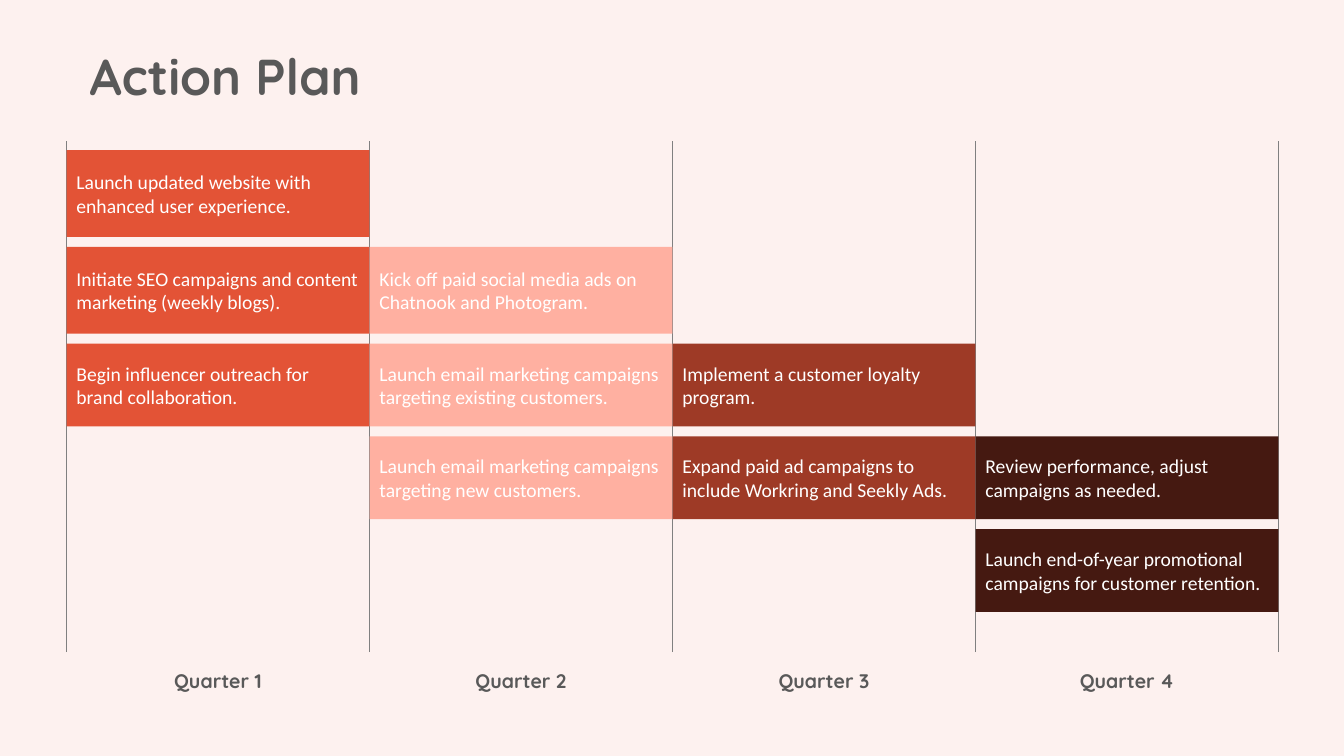
from dataclasses import dataclass
from itertools import accumulate

from lxml import etree
from pptx import Presentation
from pptx.dml.color import RGBColor
from pptx.enum.shapes import MSO_CONNECTOR, MSO_SHAPE
from pptx.enum.text import MSO_ANCHOR, PP_ALIGN
from pptx.oxml.ns import qn
from pptx.slide import Slide
from pptx.text.text import TextFrame
from pptx.util import Inches, Pt

RECT = MSO_SHAPE.RECTANGLE
STRAIGHT = MSO_CONNECTOR.STRAIGHT
MIDDLE = MSO_ANCHOR.MIDDLE
LEFT, CENTER = PP_ALIGN.LEFT, PP_ALIGN.CENTER


@dataclass(frozen=True)
class Theme:
    back: str = "FDF1EF"
    ink: str = "595959"
    rule: str = "808080"
    white: str = "FFFFFF"
    bars: tuple[str, ...] = ("E35336", "FFB0A1", "9E3A26", "451911")
    head: str = "Quicksand"
    body: str = "Calibri"
    title: int = 36
    text: int = 14
    line: float = 0.5


@dataclass(frozen=True)
class Task:
    col: int
    row: int
    text: str


THEME = Theme()

# Grid in inches: four quarters across, five rows of tasks
X0, WIDTH, COLS = 0.66, 3.005, 4
TOP, FOOT = 1.4, 6.47
GAP = 0.1
HIGH = (0.86, 0.86, 0.82, 0.82, 0.82)
ROWS = list(accumulate((h + GAP for h in HIGH[:-1]), initial=1.49))

TASKS = (
    Task(0, 0, "Launch updated website with enhanced user experience."),
    Task(0, 1, "Initiate SEO campaigns and content marketing (weekly blogs)."),
    Task(0, 2, "Begin influencer outreach for brand collaboration."),
    Task(1, 1, "Kick off paid social media ads on Chatnook and Photogram."),
    Task(1, 2, "Launch email marketing campaigns targeting existing customers."),
    Task(1, 3, "Launch email marketing campaigns targeting new customers."),
    Task(2, 2, "Implement a customer loyalty program."),
    Task(2, 3, "Expand paid ad campaigns to include Workring and Seekly Ads."),
    Task(3, 3, "Review performance, adjust campaigns as needed."),
    Task(3, 4, "Launch end-of-year promotional campaigns for customer retention."),
)


def edge(col: int) -> float:
    return X0 + col * WIDTH


def write(frame: TextFrame, text: str, face: str, size: int, color: str,
          bold: bool = False, align: PP_ALIGN = LEFT) -> None:
    frame.word_wrap = True
    para = frame.paragraphs[0]
    para.text = text
    para.alignment = align
    font = para.font
    font.name, font.size, font.bold = face, Pt(size), bold
    font.color.rgb = RGBColor.from_string(color)


def label(slide: Slide, x: float, y: float, w: float, h: float, text: str,
          size: int, align: PP_ALIGN = LEFT) -> None:
    box = slide.shapes.add_textbox(Inches(x), Inches(y), Inches(w), Inches(h))
    write(box.text_frame, text, THEME.head, size, THEME.ink, True, align)


def rule(slide: Slide, x: float) -> None:
    line = slide.shapes.add_connector(
        STRAIGHT, Inches(x), Inches(FOOT), Inches(x), Inches(TOP))
    line.line.color.rgb = RGBColor.from_string(THEME.rule)
    line.line.width = Pt(THEME.line)
    etree.SubElement(line.element.spPr, qn("a:effectLst"))


def bar(slide: Slide, task: Task) -> None:
    shape = slide.shapes.add_shape(
        RECT, Inches(edge(task.col)), Inches(ROWS[task.row]),
        Inches(WIDTH), Inches(HIGH[task.row]))
    shape.shadow.inherit = False
    shape.fill.solid()
    shape.fill.fore_color.rgb = RGBColor.from_string(THEME.bars[task.col])
    shape.line.fill.background()
    shape.text_frame.vertical_anchor = MIDDLE
    write(shape.text_frame, task.text, THEME.body, THEME.text, THEME.white)


def main() -> None:
    deck = Presentation()
    deck.slide_width, deck.slide_height = Inches(13.33), Inches(7.5)
    slide = deck.slides.add_slide(deck.slide_layouts[6])
    fill = slide.background.fill
    fill.solid()
    fill.fore_color.rgb = RGBColor.from_string(THEME.back)

    # Title
    label(slide, 0.79, 0.4, 9.3, 0.71, "Action Plan", THEME.title)

    # Quarter borders and names
    for col in range(COLS + 1):
        rule(slide, edge(col))
    wide = 1.39
    for col in range(COLS):
        x = edge(col) + (WIDTH - wide) / 2
        label(slide, x, 6.59, wide, 0.34, f"Quarter {col + 1}",
              THEME.text, CENTER)

    # Tasks
    for task in TASKS:
        bar(slide, task)

    deck.save("out.pptx")


if __name__ == "__main__":
    main()
